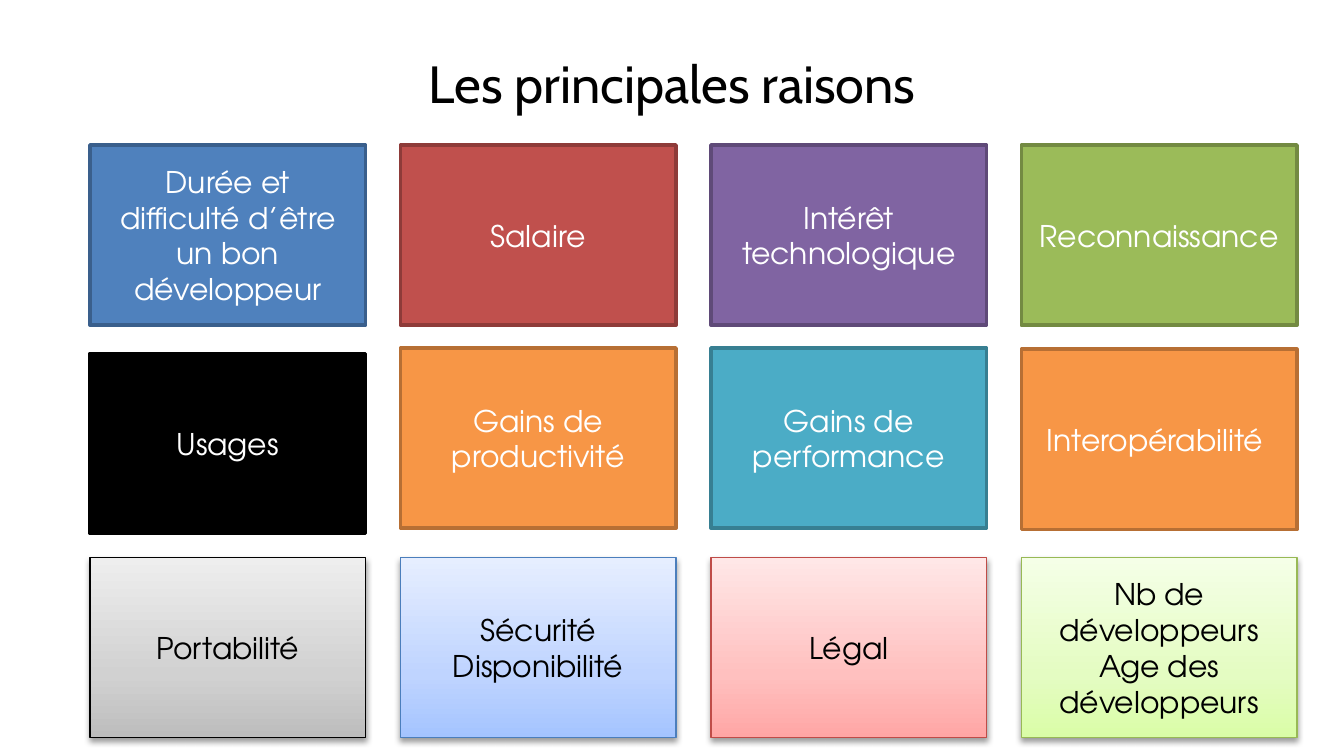
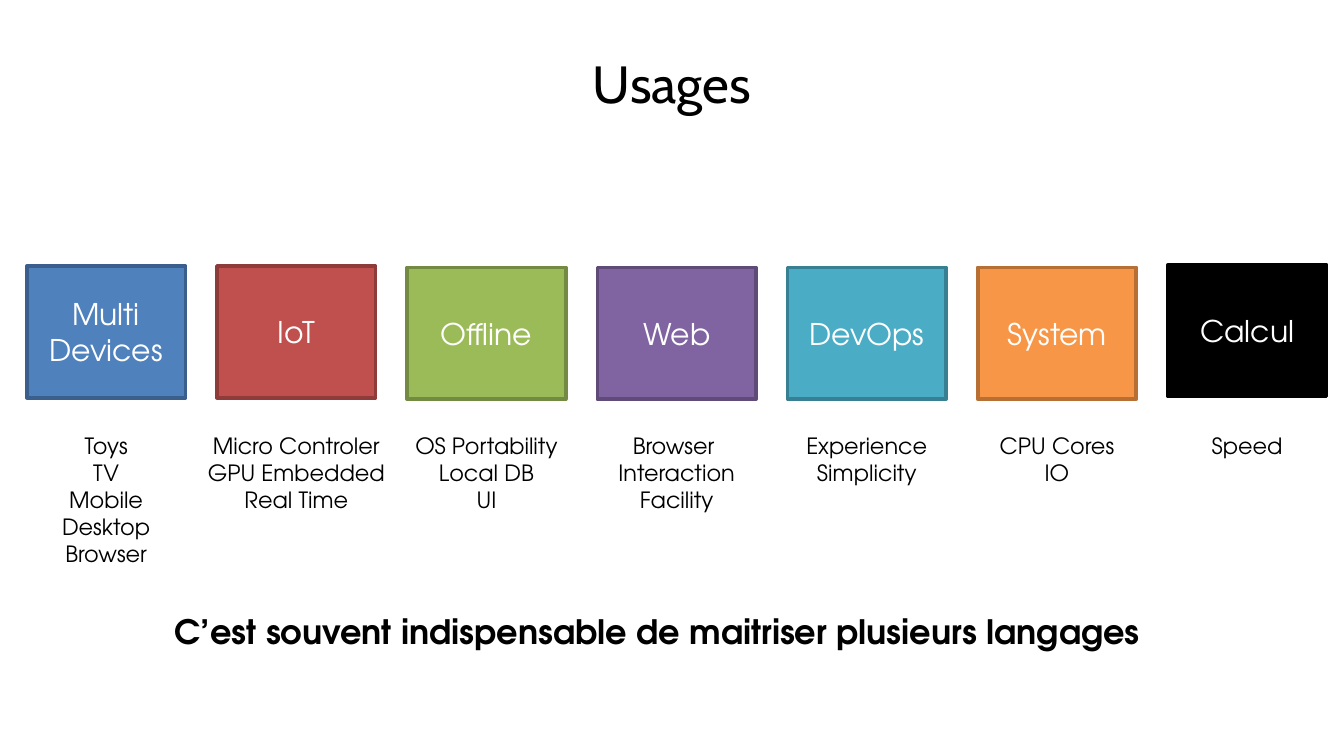
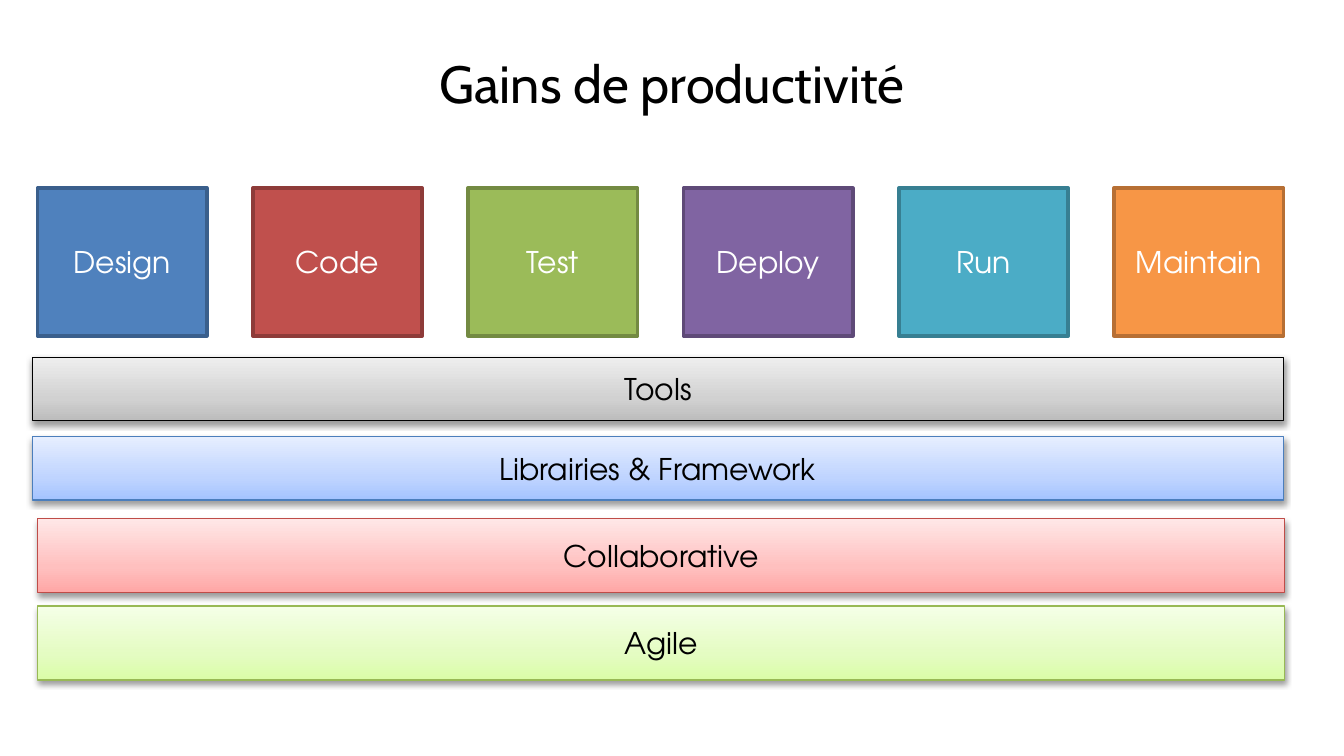
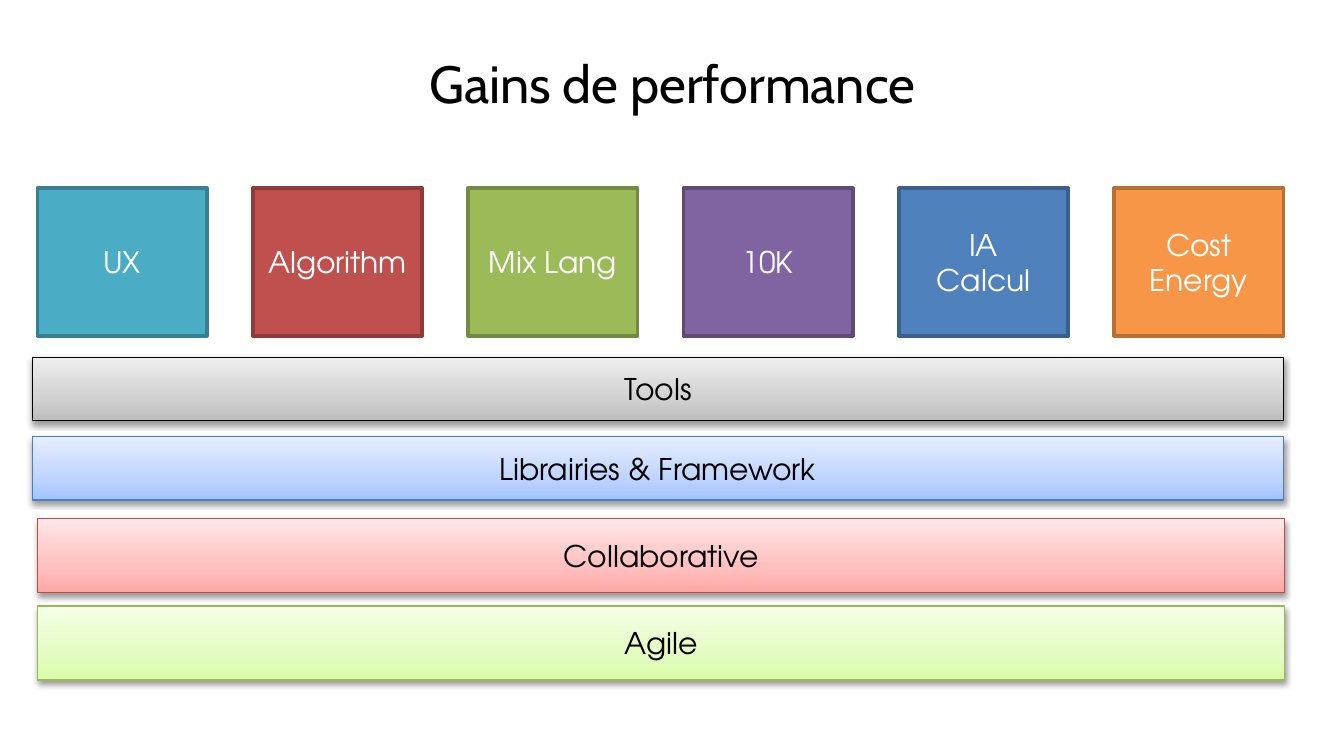
from collections import namedtuple

from pptx import Presentation
from pptx.dml.color import RGBColor
from pptx.enum.shapes import MSO_SHAPE
from pptx.enum.text import MSO_ANCHOR, MSO_AUTO_SIZE, PP_ALIGN
from pptx.oxml import parse_xml
from pptx.oxml.ns import nsdecls, qn
from pptx.util import Inches, Pt

# Shared style
TITLE_FONT = "Cabin"
BODY_FONT = "TeX Gyre Adventor"
BLACK = RGBColor(0x00, 0x00, 0x00)
WHITE = RGBColor(0xFF, 0xFF, 0xFF)

Box = namedtuple("Box", "left top width height")
Solid = namedtuple("Solid", "fill border")
Gradient = namedtuple("Gradient", "bottom middle top border")

BLUE = Solid(RGBColor(0x4F, 0x81, 0xBD), RGBColor(0x3A, 0x5F, 0x8C))
RED = Solid(RGBColor(0xC0, 0x50, 0x4D), RGBColor(0x8E, 0x3B, 0x39))
GREEN = Solid(RGBColor(0x9B, 0xBB, 0x59), RGBColor(0x73, 0x8A, 0x42))
PURPLE = Solid(RGBColor(0x80, 0x64, 0xA2), RGBColor(0x5F, 0x4A, 0x78))
TEAL = Solid(RGBColor(0x4B, 0xAC, 0xC6), RGBColor(0x37, 0x7F, 0x92))
ORANGE = Solid(RGBColor(0xF7, 0x96, 0x46), RGBColor(0xB7, 0x6F, 0x34))
DARK = Solid(BLACK, BLACK)

PALE_GREY = Gradient(RGBColor(0xBD, 0xBD, 0xBD), RGBColor(0xD1, 0xD1, 0xD1),
                     RGBColor(0xEE, 0xEE, 0xEE), BLACK)
PALE_BLUE = Gradient(RGBColor(0xA4, 0xC4, 0xFF), RGBColor(0xBF, 0xD4, 0xFF),
                     RGBColor(0xE6, 0xEE, 0xFF), RGBColor(0x4B, 0x7E, 0xBC))
PALE_RED = Gradient(RGBColor(0xFF, 0xA6, 0xA5), RGBColor(0xFF, 0xC0, 0xBF),
                    RGBColor(0xFF, 0xE7, 0xE7), RGBColor(0xBF, 0x4C, 0x48))
PALE_GREEN = Gradient(RGBColor(0xDA, 0xFD, 0xA7), RGBColor(0xE4, 0xFC, 0xC2),
                      RGBColor(0xF5, 0xFF, 0xE7), RGBColor(0x98, 0xB9, 0x55))


def inches(box):
    return [Inches(length) for length in box]


def write(frame, lines, font_name, size, color, align=PP_ALIGN.CENTER, bold=False):
    for index, line in enumerate(lines):
        paragraph = frame.paragraphs[0] if index == 0 else frame.add_paragraph()
        paragraph.text = line
        paragraph.alignment = align
        font = paragraph.font
        font.name, font.size, font.bold = font_name, Pt(size), bold
        font.color.rgb = color


def titled_slide(prs, heading):
    slide = prs.slides.add_slide(prs.slide_layouts[5])
    title = slide.shapes.title
    title.left, title.top, title.width, title.height = inches(Box(0, 0.33, 10, 0.38))
    frame = title.text_frame
    frame.auto_size = MSO_AUTO_SIZE.NONE
    frame.vertical_anchor = MSO_ANCHOR.TOP
    write(frame, [heading], TITLE_FONT, 28, BLACK)
    return slide


def shade(tile, style):
    """Three-stop gradient, darkest at the bottom, with a soft shadow below."""
    tile.fill.gradient()
    gradient = tile.element.spPr.find(qn("a:gradFill"))
    stops = "".join(
        f'<a:gs pos="{position}"><a:srgbClr val="{color}"/></a:gs>'
        for position, color in zip((0, 35000, 100000), style))
    gradient.replace(gradient.find(qn("a:gsLst")),
                     parse_xml(f'<a:gsLst {nsdecls("a")}>{stops}</a:gsLst>'))
    tile.fill.gradient_angle = 90
    tile.element.spPr.find(qn("a:effectLst")).append(parse_xml(
        f'<a:outerShdw {nsdecls("a")} blurRad="40000" dist="20000" dir="5400000" '
        'rotWithShape="0"><a:srgbClr val="000000"><a:alpha val="38000"/>'
        '</a:srgbClr></a:outerShdw>'))


def add_tile(slide, box, label, style):
    tile = slide.shapes.add_shape(MSO_SHAPE.RECTANGLE, *inches(box))
    tile.shadow.inherit = False
    tile.line.color.rgb = style.border
    if isinstance(style, Gradient):
        shade(tile, style)
        tile.line.width = Pt(0.75)
        color = BLACK
    else:
        tile.fill.solid()
        tile.fill.fore_color.rgb = style.fill
        tile.line.width = Pt(2)
        color = WHITE
    frame = tile.text_frame
    frame.word_wrap = True
    frame.vertical_anchor = MSO_ANCHOR.MIDDLE
    write(frame, label.split("\n"), BODY_FONT, 16, color)


def add_note(slide, box, lines, size, **style):
    note = slide.shapes.add_textbox(*inches(box))
    note.text_frame.word_wrap = False
    note.text_frame.auto_size = MSO_AUTO_SIZE.SHAPE_TO_FIT_TEXT
    write(note.text_frame, lines, BODY_FONT, size, BLACK, **style)


def tile_row(slide, box, tile_width, tiles, drops=None):
    """Spread tiles evenly over the box; drops lower single tiles a little."""
    step = (box.width - tile_width) / (len(tiles) - 1)
    for index, (label, style) in enumerate(tiles):
        drop = drops[index] if drops else 0
        add_tile(slide, Box(box.left + index * step, box.top + drop,
                            tile_width, box.height), label, style)


# Slide 1: grid of reasons
def reasons_slide(prs):
    slide = titled_slide(prs, "Les principales raisons")
    rows = [
        (1.08, None, [("Durée et difficulté d’être un bon développeur", BLUE),
                      ("Salaire", RED),
                      ("Intérêt technologique", PURPLE),
                      ("Reconnaissance", GREEN)]),
        (2.59, (0.04, 0, 0, 0.01), [("Usages", DARK),
                                    ("Gains de productivité", ORANGE),
                                    ("Gains de performance", TEAL),
                                    ("Interopérabilité ", ORANGE)]),
        (4.15, None, [("Portabilité", PALE_GREY),
                      ("Sécurité\nDisponibilité", PALE_BLUE),
                      ("Légal", PALE_RED),
                      ("Nb de développeurs\nAge des développeurs", PALE_GREEN)]),
    ]
    for top, drops, reasons in rows:
        tile_row(slide, Box(0.67, top, 8.98, 1.34), 2.05, reasons, drops)


# Slide 2: usages, with the needs listed under each one
def usages_slide(prs):
    slide = titled_slide(prs, "Usages")
    usages = [
        ("Multi Devices", BLUE, 0.87, ["Toys", "TV", "Mobile", "Desktop", "Browser"]),
        ("IoT", RED, 1.53, ["Micro Controler", "GPU Embedded", "Real Time"]),
        ("Offline", GREEN, 1.27, ["OS Portability", "Local DB", "UI"]),
        ("Web", PURPLE, 1.09, ["Browser ", "Interaction", "Facility"]),
        ("DevOps", TEAL, 1.11, ["Experience", "Simplicity"]),
        ("System", ORANGE, 1.07, ["CPU Cores", "IO"]),
        ("Calcul", DARK, 0.73, ["Speed"]),
    ]
    row, tile_width = Box(0.2, 1.98, 9.67, 0.98), 1.18
    tile_row(slide, row, tile_width, [usage[:2] for usage in usages],
             (0, 0, 0.01, 0.01, 0.01, 0.01, -0.01))
    step = (row.width - tile_width) / (len(usages) - 1)
    for index, (_, _, width, needs) in enumerate(usages):
        center = row.left + tile_width / 2 + index * step
        add_note(slide, Box(center - width / 2, row.top + 1.19,
                            width, 0.1 + 0.2 * len(needs)), needs, 12)
    add_note(slide, Box(1.2, 4.5, 7.58, 0.4),
             ["C’est souvent indispensable de maitriser plusieurs langages"],
             18, align=PP_ALIGN.LEFT, bold=True)


# Slides 3 and 4: steps standing on shared foundations
def gains_slide(prs, heading, steps):
    slide = titled_slide(prs, heading)
    tile_row(slide, Box(0.28, 1.4, 9.27, 1.1), 1.26, steps)
    foundations = [
        ("Tools", PALE_GREY, Box(0.24, 2.66, 9.31, 0.47)),
        ("Librairies & Framework", PALE_BLUE, Box(0.24, 3.25, 9.31, 0.47)),
        ("Collaborative", PALE_RED, Box(0.28, 3.86, 9.28, 0.55)),
        ("Agile", PALE_GREEN, Box(0.28, 4.51, 9.28, 0.55)),
    ]
    for label, style, box in foundations:
        add_tile(slide, box, label, style)


def main():
    prs = Presentation()
    # Widescreen, 16:9
    prs.slide_width, prs.slide_height = Inches(10), Inches(10 * 9 / 16)
    reasons_slide(prs)
    usages_slide(prs)
    gains_slide(prs, "Gains de productivité", [
        ("Design", BLUE), ("Code", RED), ("Test", GREEN),
        ("Deploy", PURPLE), ("Run", TEAL), ("Maintain", ORANGE)])
    gains_slide(prs, "Gains de performance", [
        ("UX", TEAL), ("Algorithm", RED), ("Mix Lang", GREEN),
        ("10K", PURPLE), ("IA\nCalcul", BLUE), ("Cost\nEnergy", ORANGE)])
    prs.save("out.pptx")


if __name__ == "__main__":
    main()
